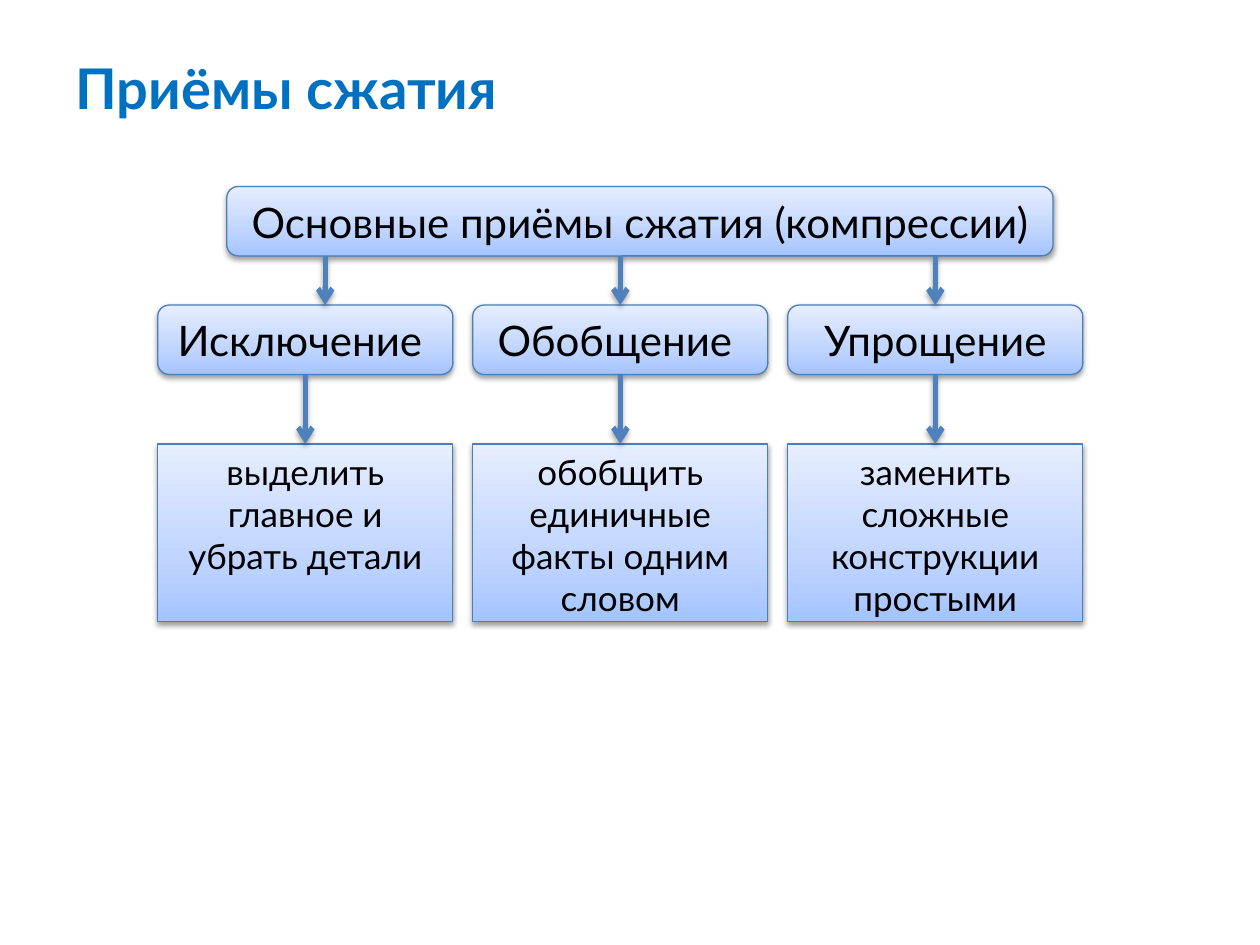
from lxml.etree import SubElement
from pptx import Presentation
from pptx.dml.color import RGBColor
from pptx.enum.shapes import MSO_CONNECTOR as CONN, MSO_SHAPE as SHAPE
from pptx.enum.text import MSO_ANCHOR as ANCHOR, PP_ALIGN as ALIGN
from pptx.oxml.ns import qn
from pptx.util import Cm, Pt

TITLE_BLUE = RGBColor(0x00, 0x70, 0xC0)
ARROW_BLUE = RGBColor(0x4F, 0x81, 0xBD)
BORDER = RGBColor(0x4B, 0x7E, 0xBC)
BLACK = RGBColor(0x00, 0x00, 0x00)
GRADIENT = (
    (0, RGBColor(0xA4, 0xC4, 0xFF)),
    (35, RGBColor(0xBF, 0xD4, 0xFF)),
    (100, RGBColor(0xE6, 0xEE, 0xFF)),
)

LEFT, PITCH, WIDTH = 3.18, 6.35, 5.95
ROOT_TOP, NAME_TOP, DETAIL_TOP = 3.76, 6.15, 8.95
BAR_HEIGHT, DETAIL_HEIGHT = 1.4, 3.58
TECHNIQUES = (
    ("Исключение ", "выделить главное и убрать детали", 0.4),
    ("Обобщение ", "обобщить единичные факты одним словом", 0),
    ("Упрощение", "заменить сложные конструкции простыми", 0),
)


class Diagram:
    font = "Lato"

    def __init__(self, slide):
        self.shapes = slide.shapes

    def label(self, sp, text, size, color, anchor, align, bold=False):
        tf = sp.text_frame
        tf.word_wrap = True
        tf.vertical_anchor = anchor
        tf.text = text
        p = tf.paragraphs[0]
        p.alignment = align
        for r in p.runs:
            r.font.name = self.font
            r.font.size = Pt(size)
            r.font.bold = bold
            r.font.color.rgb = color

    def shade(self, sp, distance, opacity):
        sp_pr = sp._element.spPr
        effects = SubElement(sp_pr, qn("a:effectLst"))
        shadow = SubElement(effects, qn("a:outerShdw"), blurRad=str(Pt(3.1)),
                            dist=str(Pt(distance)), dir="5400000", rotWithShape="0")
        color = SubElement(shadow, qn("a:srgbClr"), val=str(BLACK))
        SubElement(color, qn("a:alpha"), val=str(opacity * 1000))

    def title(self, text, x, y, w, h):
        sp = self.shapes.add_textbox(Cm(x), Cm(y), Cm(w), Cm(h))
        self.label(sp, text, 32, TITLE_BLUE, ANCHOR.MIDDLE, ALIGN.LEFT, True)

    def box(self, kind, text, x, y, w, h, size=24, anchor=ANCHOR.MIDDLE):
        sp = self.shapes.add_shape(kind, Cm(x), Cm(y), Cm(w), Cm(h))
        sp.fill.gradient()
        sp.fill.gradient_angle = 90
        stops = sp._element.spPr.find(".//" + qn("a:gsLst"))
        for stop in list(stops):
            stops.remove(stop)
        for position, color in GRADIENT:
            stop = SubElement(stops, qn("a:gs"), pos=str(position * 1000))
            SubElement(stop, qn("a:srgbClr"), val=str(color))
        sp.line.color.rgb = BORDER
        sp.line.width = Pt(0.75)
        self.shade(sp, 1.6, 38)
        self.label(sp, text, size, BLACK, anchor, ALIGN.CENTER)

    def arrow(self, x, top, bottom):
        line = self.shapes.add_connector(CONN.STRAIGHT, Cm(x), Cm(top), Cm(x), Cm(bottom))
        line.line.color.rgb = ARROW_BLUE
        line.line.width = Pt(3)
        SubElement(line._element.spPr.find(qn("a:ln")), qn("a:tailEnd"), type="arrow")
        self.shade(line, 1.8, 35)


def main():
    prs = Presentation()
    prs.slide_width, prs.slide_height = Cm(25.4), Cm(19.05)
    diagram = Diagram(prs.slides.add_slide(prs.slide_layouts[6]))

    diagram.title("Приёмы сжатия", 1.27, 0.76, 22.86, 2)
    diagram.box(SHAPE.ROUNDED_RECTANGLE, "Основные приёмы сжатия (компрессии)",
                4.57, ROOT_TOP, 16.66, BAR_HEIGHT)
    for i, (name, detail, shift) in enumerate(TECHNIQUES):
        x = LEFT + i * PITCH
        center = x + WIDTH / 2
        diagram.box(SHAPE.ROUNDED_RECTANGLE, name, x, NAME_TOP, WIDTH, BAR_HEIGHT)
        diagram.box(SHAPE.RECTANGLE, detail, x, DETAIL_TOP, WIDTH, DETAIL_HEIGHT,
                    20, ANCHOR.TOP)
        diagram.arrow(center + shift, ROOT_TOP + BAR_HEIGHT, NAME_TOP)
        diagram.arrow(center, NAME_TOP + BAR_HEIGHT, DETAIL_TOP)

    prs.save("out.pptx")


if __name__ == "__main__":
    main()
